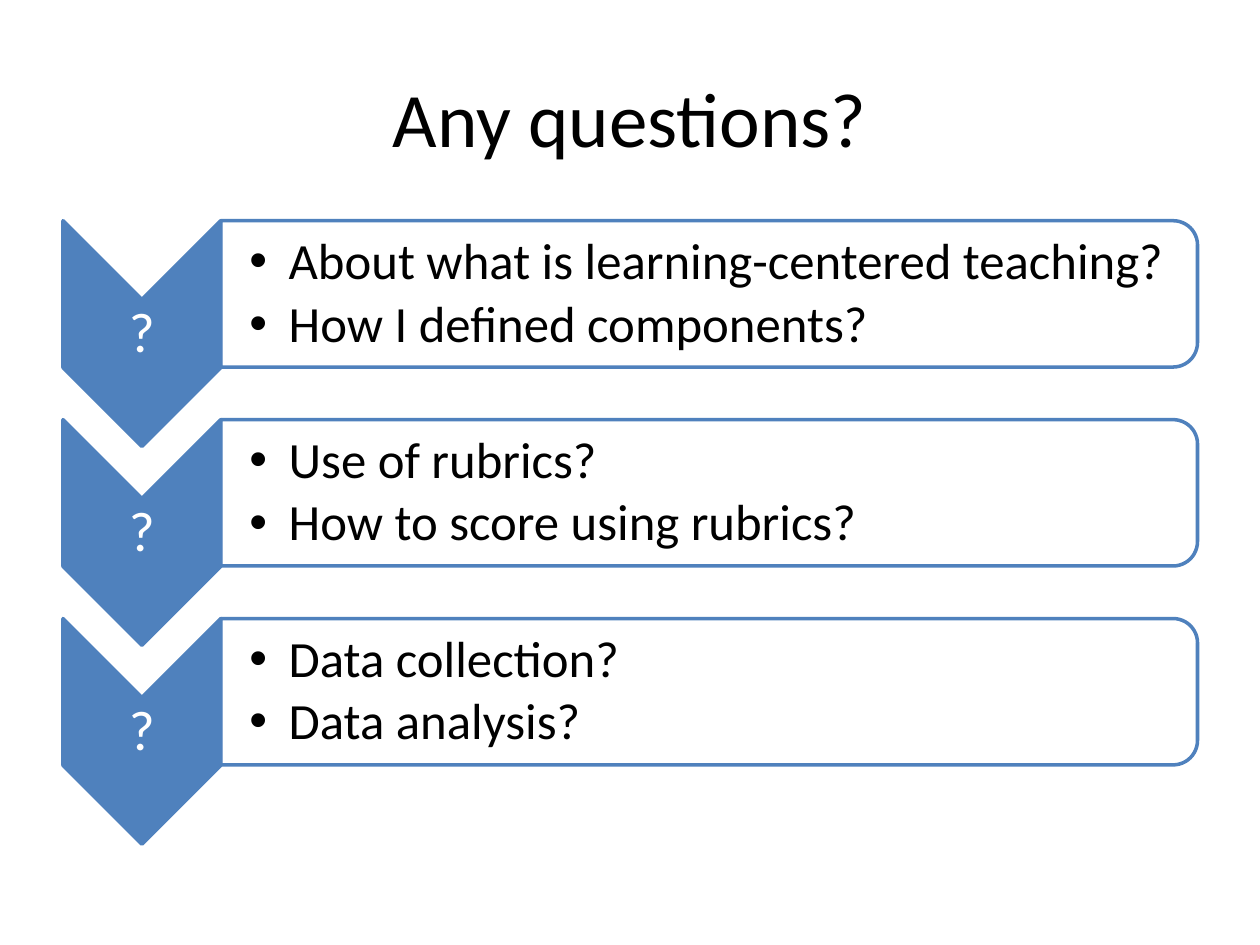
from pptx import Presentation
from pptx.dml.color import RGBColor
from pptx.enum.shapes import MSO_SHAPE as Preset
from pptx.enum.text import MSO_ANCHOR as Anchor, PP_ALIGN as Align
from pptx.oxml.ns import qn
from pptx.util import Cm, Pt
from lxml.etree import SubElement

BLUE = RGBColor(0x4F, 0x81, 0xBD)
WHITE = RGBColor(0xFF, 0xFF, 0xFF)
BLACK = RGBColor(0x00, 0x00, 0x00)

FIRST_ROW_TOP = 4.45
ROW_PITCH = 4.01
MARK_LEFT, MARK_WIDTH = 1.27, 3.18
CARD_LEFT = MARK_LEFT + MARK_WIDTH

TOPICS = [
    ["About what is learning-centered teaching?", "How I defined components?"],
    ["Use of rubrics?", "How to score using rubrics?"],
    ["Data collection?", "Data analysis?"],
]


def apply_format(target, values):
    for attribute, value in values.items():
        setattr(target, attribute, value)


def style_text(paragraph, size, color, **layout):
    apply_format(paragraph, layout)
    apply_format(paragraph.font, {"name": "Calibri", "size": Pt(size)})
    paragraph.font.color.rgb = color


def add_title(slide, wording):
    title = slide.shapes.title
    apply_format(title, {"left": Cm(1.27), "top": Cm(0.76),
                         "width": Cm(22.86), "height": Cm(3.18)})
    title.text_frame.text = wording
    title.text_frame.vertical_anchor = Anchor.MIDDLE
    style_text(title.text_frame.paragraphs[0], 44, BLACK, alignment=Align.CENTER)


def add_turned_shape(slide, preset, left, top, width, height, fill):
    turned_left = left + (width - height) / 2
    turned_top = top + (height - width) / 2
    turned = slide.shapes.add_shape(
        preset, Cm(turned_left), Cm(turned_top), Cm(height), Cm(width))
    turned.rotation = 90
    turned.shadow.inherit = False
    turned.fill.solid()
    turned.fill.fore_color.rgb = fill
    turned.line.color.rgb = BLUE
    turned.line.width = Pt(2)
    return turned


def set_opacity(shape, percent):
    color = shape.fill._xPr.find(qn("a:solidFill"))[0]
    SubElement(color, qn("a:alpha"), val=str(percent * 1000))


def add_text_frame(slide, left, top, width, height, inset_left=0.05):
    frame = slide.shapes.add_textbox(
        Cm(left), Cm(top), Cm(width), Cm(height)).text_frame
    apply_format(frame, {
        "word_wrap": True, "vertical_anchor": Anchor.MIDDLE,
        "margin_left": Cm(inset_left), "margin_right": Cm(0.05),
        "margin_top": Cm(0.05), "margin_bottom": Cm(0.05)})
    return frame


def add_bullet(paragraph):
    properties = paragraph._p.get_or_add_pPr()
    properties.set("marL", str(Cm(0.79)))
    properties.set("indent", str(-Cm(0.79)))
    SubElement(properties, qn("a:buFont"), typeface="Arial")
    SubElement(properties, qn("a:buChar"), char="•")


def add_question_mark(slide, top):
    add_turned_shape(slide, Preset.CHEVRON, MARK_LEFT, top, MARK_WIDTH, 4.55, BLUE)
    frame = add_text_frame(slide, MARK_LEFT, top + 1.6, MARK_WIDTH, 1.37)
    frame.text = "?"
    style_text(frame.paragraphs[0], 32, WHITE,
               alignment=Align.CENTER, line_spacing=0.9)


def add_topic_card(slide, top, questions):
    card = add_turned_shape(slide, Preset.ROUND_2_SAME_RECTANGLE,
                            CARD_LEFT, top, 19.69, 2.95, WHITE)
    set_opacity(card, 90)
    frame = add_text_frame(slide, CARD_LEFT, top + 0.15, 19.53, 2.67, 0.58)
    frame.text = "\n".join(questions)
    for paragraph in frame.paragraphs:
        style_text(paragraph, 29, BLACK, level=1, alignment=Align.LEFT,
                   line_spacing=0.9, space_after=Pt(4.35))
        add_bullet(paragraph)


def main():
    deck = Presentation()
    apply_format(deck, {"slide_width": Cm(25.4), "slide_height": Cm(19.05)})
    slide = deck.slides.add_slide(deck.slide_layouts[5])
    add_title(slide, "Any questions?")
    for row, questions in enumerate(TOPICS):
        top = FIRST_ROW_TOP + row * ROW_PITCH
        add_question_mark(slide, top)
        add_topic_card(slide, top, questions)
    deck.save("out.pptx")


if __name__ == "__main__":
    main()
